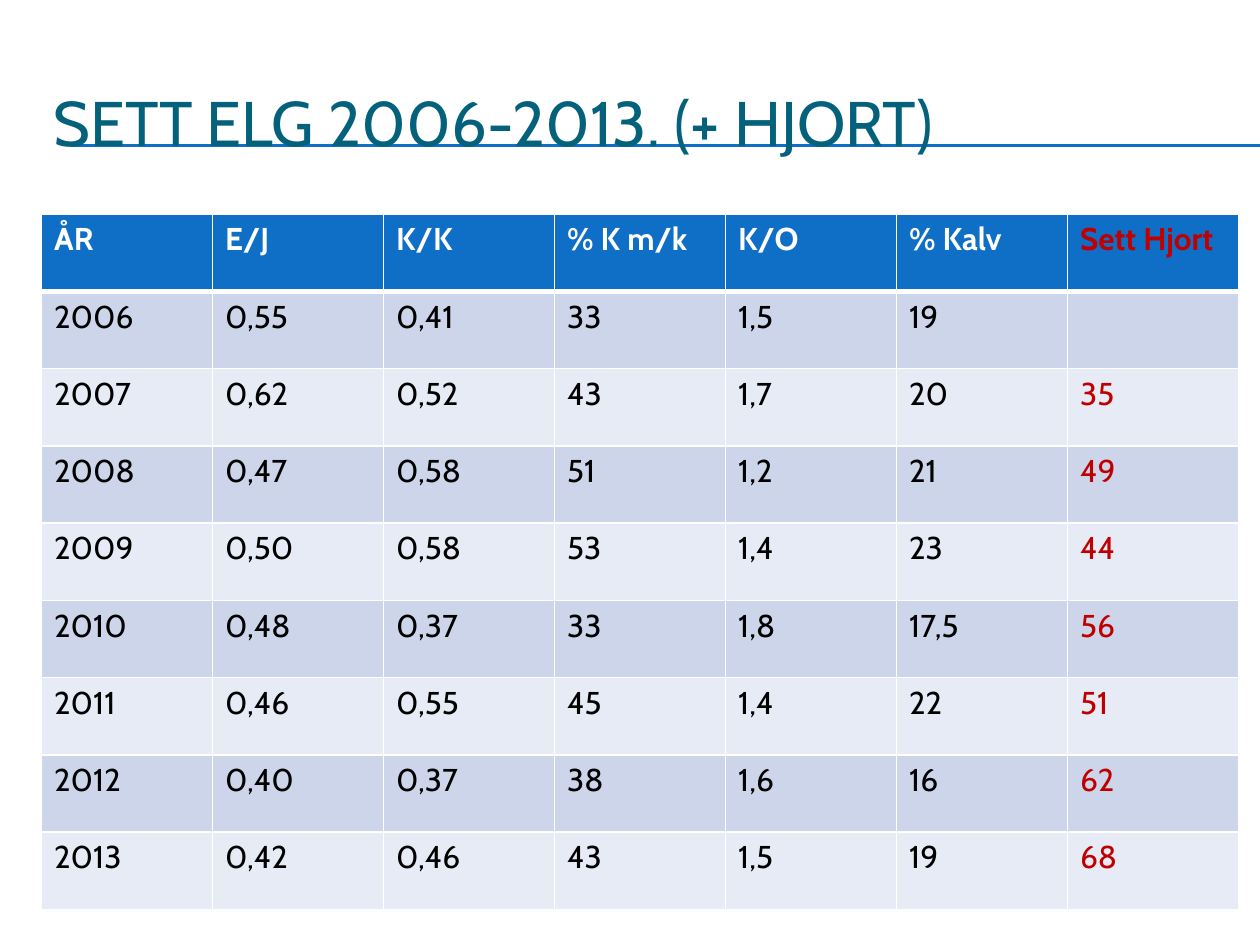
from dataclasses import dataclass

import lxml.etree
import pptx
import pptx.dml.color
import pptx.enum.shapes
import pptx.enum.text
import pptx.oxml.ns
import pptx.presentation
import pptx.slide
import pptx.table
import pptx.text.text
import pptx.util
from pptx.util import Inches


@dataclass(frozen=True)
class Theme:
    font: str = "Cabin"
    title: str = "04617B"
    blue: str = "0F6FC6"
    white: str = "FFFFFF"
    black: str = "000000"
    red: str = "C00000"
    bands: tuple[str, str] = ("CCD5EA", "E7EBF5")
    head_size: int = 36
    cell_size: int = 18
    rule: float = 0.75
    thin: int = 1
    thick: int = 3


@dataclass(frozen=True)
class Rule:
    left: float
    right: float
    top: float


THEME = Theme()
RULES = [Rule(0.56, 10, 1.15), Rule(0.56, 10, 1.16)]
HEADS = ["ÅR", "E/J", "K/K", "% K m/k", "K/O", "% Kalv", "Sett Hjort"]
YEARS = [
    ["2006", "0,55", "0,41", "33", "1,5", "19", ""],
    ["2007", "0,62", "0,52", "43", "1,7", "20", "35"],
    ["2008", "0,47", "0,58", "51", "1,2", "21", "49"],
    ["2009", "0,50", "0,58", "53", "1,4", "23", "44"],
    ["2010", "0,48", "0,37", "33", "1,8", "17,5", "56"],
    ["2011", "0,46", "0,55", "45", "1,4", "22", "51"],
    ["2012", "0,40", "0,37", "38", "1,6", "16", "62"],
    ["2013", "0,42", "0,46", "43", "1,5", "19", "68"],
]


def paint(code: str) -> pptx.dml.color.RGBColor:
    return pptx.dml.color.RGBColor.from_string(code)


def write(frame: pptx.text.text.TextFrame, text: str, *, size: int,
          color: str, bold: bool = False) -> None:
    run = frame.paragraphs[0].add_run()
    run.text = text
    run.font.name = THEME.font
    run.font.size = pptx.util.Pt(size)
    run.font.bold = bold
    run.font.color.rgb = paint(color)


def draw_rule(slide: pptx.slide.Slide, rule: Rule) -> None:
    line = slide.shapes.add_connector(
        pptx.enum.shapes.MSO_CONNECTOR.STRAIGHT,
        Inches(rule.left), Inches(rule.top), Inches(rule.right), Inches(rule.top))
    line.line.color.rgb = paint(THEME.blue)
    line.line.width = pptx.util.Pt(THEME.rule)
    lxml.etree.SubElement(line._element.spPr, pptx.oxml.ns.qn("a:effectLst"))


def draw_title(slide: pptx.slide.Slide, text: str) -> None:
    box = slide.shapes.add_textbox(Inches(0.33), Inches(0.5), Inches(9.5), Inches(0.92))
    box.text_frame.word_wrap = True
    box.text_frame.vertical_anchor = pptx.enum.text.MSO_ANCHOR.MIDDLE
    write(box.text_frame, text, size=THEME.head_size, color=THEME.title)


def add_edge(cell: pptx.table._Cell, side: str, width: int) -> None:
    qn = pptx.oxml.ns.qn
    props = cell._tc.get_or_add_tcPr()
    edge = lxml.etree.SubElement(props, qn(f"a:ln{side}"), w=str(pptx.util.Pt(width)))
    fill = lxml.etree.SubElement(edge, qn("a:solidFill"))
    lxml.etree.SubElement(fill, qn("a:srgbClr"), val=THEME.white)


def draw_cell(cell: pptx.table._Cell, text: str, row: int, last: bool) -> None:
    head = row == 0
    for side in "LRTB":
        heavy = (row, side) in {(0, "B"), (1, "T")}
        add_edge(cell, side, THEME.thick if heavy else THEME.thin)
    cell.fill.solid()
    cell.fill.fore_color.rgb = paint(THEME.blue if head else THEME.bands[(row - 1) % 2])
    color = THEME.red if last else THEME.white if head else THEME.black
    if text:
        write(cell.text_frame, text, size=THEME.cell_size, color=color, bold=head)


def draw_table(slide: pptx.slide.Slide, rows: list[list[str]]) -> None:
    count = len(rows[0])
    table = slide.shapes.add_table(
        len(rows), count, Inches(0.33), Inches(1.7), Inches(9.5), Inches(5.52)).table
    for row, texts in enumerate(rows):
        for col, text in enumerate(texts):
            draw_cell(table.cell(row, col), text, row, col == count - 1)


def main() -> None:
    deck = pptx.Presentation()
    deck.slide_width, deck.slide_height = Inches(10), Inches(7.5)
    slide = deck.slides.add_slide(deck.slide_layouts[6])
    for rule in RULES:
        draw_rule(slide, rule)
    draw_title(slide, "SETT ELG 2006-2013. (+ HJORT)")
    draw_table(slide, [HEADS, *YEARS])
    deck.save("out.pptx")


if __name__ == "__main__":
    main()
